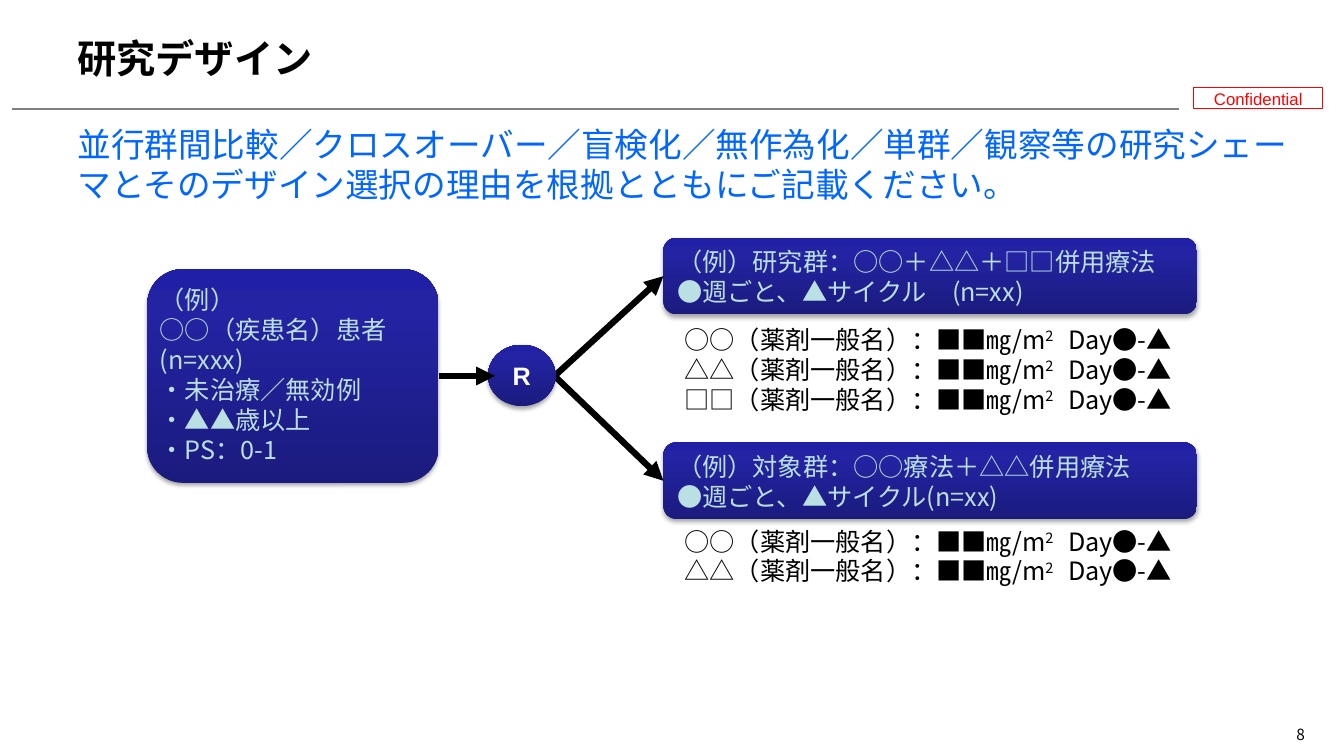
from lxml import etree
from pptx import Presentation
from pptx.dml.color import RGBColor
from pptx.enum import shapes, text
from pptx.oxml import ns
from pptx.util import Inches, Pt

# Content
CJK = "Noto Sans CJK JP"
TITLE = "研究デザイン"
GUIDANCE = ("並行群間比較／クロスオーバー／盲検化／無作為化／単群／観察等の研究シェーマと"
            "そのデザイン選択の理由を根拠とともにご記載ください。")
PATIENTS = ["（例）", "○○（疾患名）患者\n(n=xxx)", "・未治療／無効例", "・▲▲歳以上", "・PS：0-1"]
ARMS = [
    {"top": 2.36, "doses_top": 3.17, "drugs": ["○○", "△△", "□□"],
     "heading": ["（例）研究群：○○＋△△＋□□併用療法", "●週ごと、▲サイクル　(n=xx)"]},
    {"top": 4.39, "doses_top": 5.17, "drugs": ["○○", "△△"],
     "heading": ["（例）対象群：○○療法＋△△併用療法", "●週ごと、▲サイクル(n=xx)"]},
]
DOSE = "（薬剤一般名）：■■㎎/m"
SUPERSCRIPT = "2　"
DAYS = "Day●-▲"

# Layout and style
AXIS = 3.73
ARM_LEFT, ARM_WIDTH, ARM_HEIGHT = 6.58, 5.29, 0.76
LINE_FACTOR = 1.19
NAVY_STOPS = [(0, "1B1B7E"), (80, "2323A3"), (100, "2020A6")]
PALE = "BBE0E3"
ALIGN = text.PP_ALIGN
SHAPE = shapes.MSO_SHAPE

presentation = Presentation()
presentation.slide_width, presentation.slide_height = Inches(13.33), Inches(7.5)
slide = presentation.slides.add_slide(presentation.slide_layouts[6])


def colour(value):
    return RGBColor.from_string(value)


def add_xml(parent, tag, **attributes):
    return etree.SubElement(parent, ns.qn(tag), attributes)


def write(shape, paragraphs, size=18, font=CJK, color="000000", bold=False,
          align=ALIGN.LEFT, middle=False, wrap=True, side=0.1):
    """Each paragraph is a string or a list of (text, is_superscript) runs."""
    frame = shape.text_frame
    frame.word_wrap = wrap
    frame.vertical_anchor = text.MSO_ANCHOR.MIDDLE if middle else text.MSO_ANCHOR.TOP
    frame.margin_left = frame.margin_right = Inches(side)
    for index, content in enumerate(paragraphs):
        paragraph = frame.paragraphs[0] if index == 0 else frame.add_paragraph()
        paragraph.alignment = align
        if font == CJK or size > 18:
            paragraph.line_spacing = Pt(round(size * LINE_FACTOR, 1))
        runs = [(content, False)] if isinstance(content, str) else content
        for words, raised in runs:
            for number, line in enumerate(words.split("\n")):
                if number:
                    paragraph.add_line_break()
                run = paragraph.add_run()
                run.text = line
                run.font.size, run.font.bold, run.font.name = Pt(size), bold, font
                run.font.color.rgb = colour(color)
                properties = run._r.get_or_add_rPr()
                add_xml(properties, "a:ea", typeface=CJK)
                if raised:
                    properties.set("baseline", "30000")


def add_text(left, top, width, height, paragraphs, **style):
    box = slide.shapes.add_textbox(*map(Inches, (left, top, width, height)))
    write(box, paragraphs, **style)


def add_navy(kind, left, top, width, height, paragraphs, **style):
    shape = slide.shapes.add_shape(kind, *map(Inches, (left, top, width, height)))
    shape.line.fill.background()
    shape.fill.gradient()
    shape.fill.gradient_angle = 90
    properties = shape._element.spPr
    stops = properties.find(".//" + ns.qn("a:gsLst"))
    for stop in list(stops):
        stops.remove(stop)
    for position, value in NAVY_STOPS:
        stop = add_xml(stops, "a:gs", pos=str(position * 1000))
        add_xml(stop, "a:srgbClr", val=value)
    shape.shadow.inherit = False
    shadow = add_xml(properties.find(ns.qn("a:effectLst")), "a:outerShdw", blurRad="40000",
                     dist="23000", dir="5400000", rotWithShape="0")
    add_xml(add_xml(shadow, "a:srgbClr", val="000000"), "a:alpha", val="35000")
    write(shape, paragraphs, **style)
    return shape


def add_line(start, end, color="000000", width=4.5, arrow=True):
    line = slide.shapes.add_connector(shapes.MSO_CONNECTOR.STRAIGHT, *map(Inches, start + end))
    line.line.color.rgb = colour(color)
    line.line.width = Pt(width)
    if arrow:
        add_xml(line.line._get_or_add_ln(), "a:tailEnd", type="triangle")
    add_xml(line._element.spPr, "a:effectLst")
    return line


# Page frame
stamp = slide.shapes.add_shape(SHAPE.RECTANGLE, *map(Inches, (11.84, 0.87, 1.28, 0.21)))
stamp.shadow.inherit = False
stamp.fill.solid()
stamp.fill.fore_color.rgb = colour("FFFFFF")
stamp.line.color.rgb = colour("FF0000")
stamp.line.width = Pt(0.75)
write(stamp, ["Confidential"], size=12, font="Arial", color="FF0000",
      align=ALIGN.CENTER, middle=True, wrap=False)
add_line((0.12, 1.08), (11.69, 1.08), color="808080", width=1.5, arrow=False)
add_text(12.76, 7.15, 0.59, 0.35, ["8"], size=11)
add_text(0.67, 0.3, 11.83, 0.68, [TITLE], size=28, font="Arial", bold=True)
add_text(0.67, 1.18, 12.27, 6.01, [GUIDANCE], size=24, font="Arial", color="0066FF")

# Patients and treatment arms
patients = add_navy(SHAPE.ROUNDED_RECTANGLE, 1.46, AXIS - 1.06, 2.89, 2.12, PATIENTS,
                    color=PALE, side=0.02)
for arm in ARMS:
    heading = add_navy(SHAPE.ROUNDED_RECTANGLE, ARM_LEFT, arm["top"], ARM_WIDTH, ARM_HEIGHT,
                       arm["heading"], color=PALE)
    branch = add_line((5.5, AXIS), (ARM_LEFT, arm["top"] + ARM_HEIGHT / 2))
    branch.end_connect(heading, 1)
    doses = [[(drug + DOSE, False), (SUPERSCRIPT, True), (DAYS, False)] for drug in arm["drugs"]]
    add_text(6.69, arm["doses_top"], 5.88, 0.11 + 0.3 * len(doses), doses)

# Randomisation
add_navy(SHAPE.OVAL, 4.84, AXIS - 0.31, 0.67, 0.61, ["R"], font="Arial", color="FFFFFF",
         bold=True, align=ALIGN.CENTER, middle=True, wrap=False)
entry = add_line((4.35, AXIS), (4.91, AXIS))
entry.begin_connect(patients, 3)

presentation.save("out.pptx")
